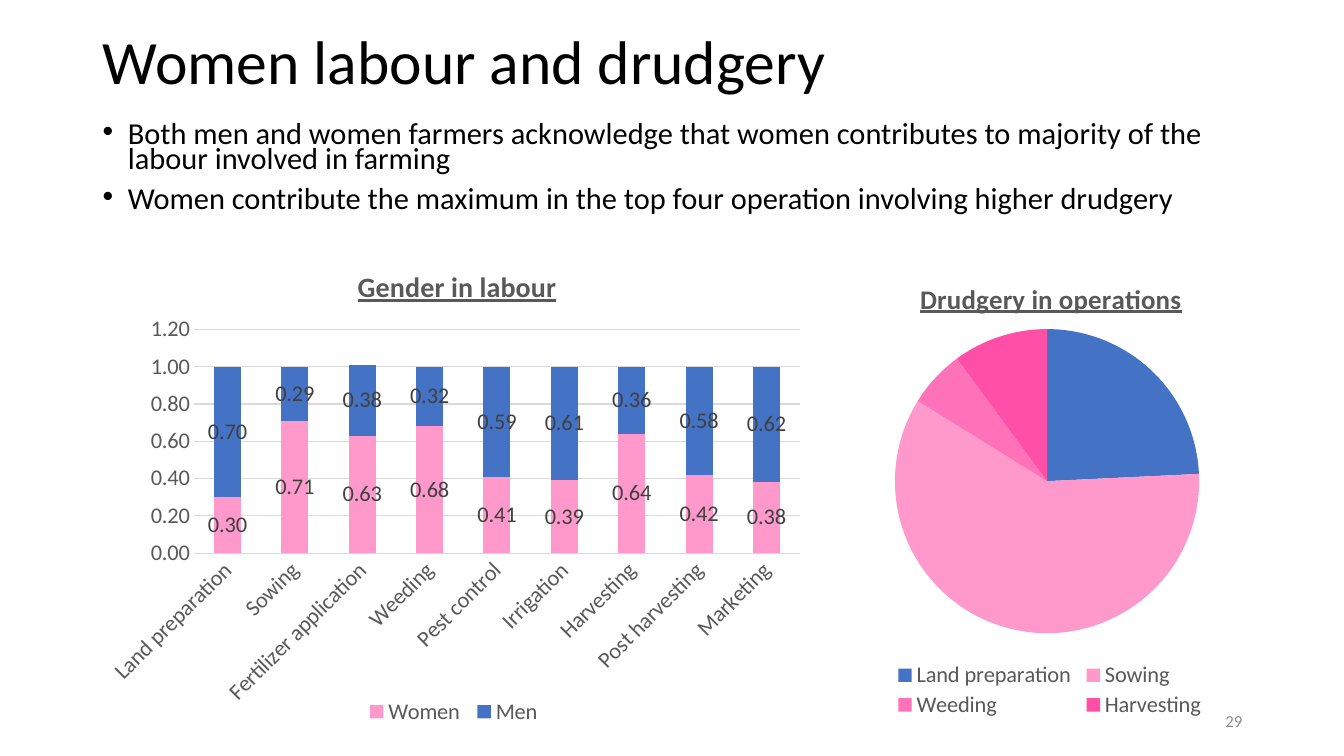
import pptx
import pptx.chart.data
import pptx.dml.color
import pptx.enum.chart
import pptx.enum.text
import pptx.oxml
import pptx.oxml.ns
import pptx.util
from pptx.util import Inches

RGBColor = pptx.dml.color.RGBColor
BLACK = RGBColor(0x00, 0x00, 0x00)
AXIS_GREY = RGBColor(0x59, 0x59, 0x59)
LABEL_GREY = RGBColor(0x40, 0x40, 0x40)
NUMBER_GREY = RGBColor(0x8C, 0x8C, 0x8C)
GRID_GREY = RGBColor(0xD9, 0xD9, 0xD9)
BLUE = RGBColor(0x44, 0x72, 0xC4)
LIGHT_PINK = RGBColor(0xFF, 0x99, 0xCC)
MID_PINK = RGBColor(0xFF, 0x71, 0xB8)
HOT_PINK = RGBColor(0xFF, 0x4F, 0xA7)

BULLETS = [
    "Both men and women farmers acknowledge that women contributes to majority "
    "of the labour involved in farming",
    "Women contribute the maximum in the top four operation involving higher drudgery",
]
OPERATIONS = ["Land preparation", "Sowing", "Fertilizer application", "Weeding",
              "Pest control", "Irrigation", "Harvesting", "Post harvesting", "Marketing"]
LABOUR = [
    ("Women", [0.30, 0.71, 0.63, 0.68, 0.41, 0.39, 0.64, 0.42, 0.38], LIGHT_PINK),
    ("Men", [0.70, 0.29, 0.38, 0.32, 0.59, 0.61, 0.36, 0.58, 0.62], BLUE),
]
DRUDGERY = [24, 59, 0, 6, 0, 0, 10]
SLICE_COLOURS = {0: BLUE, 1: LIGHT_PINK, 3: MID_PINK, 6: HOT_PINK}


def style_font(font, size, colour):
    font.name = "Calibri"
    font.size = pptx.util.Pt(size)
    font.color.rgb = colour


def chart_element(tag, **attributes):
    element = pptx.oxml.parse_xml(f"<c:{tag} {pptx.oxml.ns.nsdecls('c')}/>")
    for name, value in attributes.items():
        element.set(name, str(value))
    return element


def place_part(part, left, top, width=None, height=None, inner=False):
    """Fix a chart part at fractions of the chart's frame."""
    layout = part.find(pptx.oxml.ns.qn("c:layout"))
    if layout is None:
        layout = chart_element("layout")
        overlay = part.find(pptx.oxml.ns.qn("c:overlay"))
        if overlay is None:
            part.insert(0, layout)
        else:
            overlay.addprevious(layout)
    manual = chart_element("manualLayout")
    layout.append(manual)
    if inner:
        manual.append(chart_element("layoutTarget", val="inner"))
    for tag in ("xMode", "yMode"):
        manual.append(chart_element(tag, val="edge"))
    for tag, value in zip("xywh", (left, top, width, height)):
        if value is not None:
            manual.append(chart_element(tag, val=value))


def add_titled_chart(slide, box, kind, data, title, title_size):
    """Add a chart with its underlined title and bottom legend."""
    chart = slide.shapes.add_chart(kind, *map(Inches, box), data).chart
    style_font(chart.font, 16, BLACK)
    chart.has_title = True
    chart.chart_title.include_in_layout = False
    para = chart.chart_title.text_frame.paragraphs[0]
    para.text = title
    font = para.runs[0].font
    style_font(font, title_size, AXIS_GREY)
    font.bold = font.underline = True

    chart.has_legend = True
    chart.legend.position = pptx.enum.chart.XL_LEGEND_POSITION.BOTTOM
    chart.legend.include_in_layout = False
    style_font(chart.legend.font, 16, AXIS_GREY)
    return chart


def add_heading(slide, box):
    title = slide.shapes.title
    title.left, title.top, title.width, title.height = map(Inches, box)
    frame = title.text_frame
    frame.text = "Women labour and drudgery"
    frame.vertical_anchor = pptx.enum.text.MSO_ANCHOR.MIDDLE
    para = frame.paragraphs[0]
    para.alignment = pptx.enum.text.PP_ALIGN.LEFT
    para.line_spacing = 0.9
    style_font(para.runs[0].font, 44, BLACK)


def add_bullets(slide, box):
    frame = slide.shapes.add_textbox(*map(Inches, box)).text_frame
    frame.word_wrap = True
    frame.text = "\n".join(BULLETS)
    for para in frame.paragraphs:
        para.line_spacing = 0.7
        para.space_before = pptx.util.Pt(10)
        style_font(para.runs[0].font, 21.7, BLACK)
        # Hanging bullet
        properties = para._p.get_or_add_pPr()
        properties.set("marL", str(Inches(0.25)))
        properties.set("indent", str(-Inches(0.25)))
        namespace = pptx.oxml.ns.nsdecls("a")
        properties.append(pptx.oxml.parse_xml(f'<a:buFont {namespace} typeface="Arial"/>'))
        properties.append(pptx.oxml.parse_xml(f'<a:buChar {namespace} char="•"/>'))


def add_labour_chart(slide, box):
    data = pptx.chart.data.CategoryChartData(number_format="0.00")
    data.categories = OPERATIONS
    for name, values, _ in LABOUR:
        data.add_series(name, values)
    chart = add_titled_chart(slide, box, pptx.enum.chart.XL_CHART_TYPE.COLUMN_STACKED,
                             data, "Gender in labour", 20)

    # Stacked columns with centred values
    plot = chart.plots[0]
    plot.gap_width, plot.overlap = 150, 100
    plot.vary_by_categories = False
    for series, (_, _, colour) in zip(plot.series, LABOUR):
        series.format.fill.solid()
        series.format.fill.fore_color.rgb = colour
        labels = series.data_labels
        labels.show_value = True
        labels.number_format, labels.number_format_is_linked = "0.00", False
        labels.position = pptx.enum.chart.XL_LABEL_POSITION.CENTER
        style_font(labels.font, 16, LABEL_GREY)

    # Axes
    names, shares = chart.category_axis, chart.value_axis
    for axis in (names, shares):
        axis.major_tick_mark = pptx.enum.chart.XL_TICK_MARK.NONE
        style_font(axis.tick_labels.font, 16, AXIS_GREY)
    names._element.txPr.find(pptx.oxml.ns.qn("a:bodyPr")).set("rot", "-2700000")
    shares.minimum_scale, shares.maximum_scale, shares.major_unit = 0, 1.2, 0.2
    shares.tick_labels.number_format = "0.00"
    shares.tick_labels.number_format_is_linked = False
    shares.format.line.fill.background()
    for line in (names.format.line, shares.major_gridlines.format.line):
        line.color.rgb = GRID_GREY
        line.width = pptx.util.Pt(0.75)

    place_part(chart.chart_title._element, 0.36, 0.05)
    place_part(chart._chartSpace.chart.plotArea, 0.14, 0.18, 0.84, 0.43, inner=True)
    place_part(chart.legend._element, 0.37, 0.88, 0.26, 0.07)


def add_drudgery_chart(slide, box):
    data = pptx.chart.data.CategoryChartData()
    data.categories = OPERATIONS[:len(DRUDGERY)]
    data.add_series("Series 1", DRUDGERY)
    chart = add_titled_chart(slide, box, pptx.enum.chart.XL_CHART_TYPE.PIE,
                             data, "Drudgery in operations", 19.2)

    # Slices, with the empty ones left out of the legend
    plot = chart.plots[0]
    plot.vary_by_categories = True
    legend_position = chart.legend._element.find(pptx.oxml.ns.qn("c:legendPos"))
    for index in reversed(range(len(DRUDGERY))):
        if index in SLICE_COLOURS:
            fill = plot.series[0].points[index].format.fill
            fill.solid()
            fill.fore_color.rgb = SLICE_COLOURS[index]
        else:
            entry = chart_element("legendEntry")
            entry.append(chart_element("idx", val=index))
            entry.append(chart_element("delete", val=1))
            legend_position.addnext(entry)

    place_part(chart.chart_title._element, 0.24, 0.05)
    place_part(chart._chartSpace.chart.plotArea, 0.2, 0.16, 0.6, 0.65, inner=True)
    place_part(chart.legend._element, 0.19, 0.86, 0.63, 0.13)


def add_page_number(slide, box):
    frame = slide.shapes.add_textbox(*map(Inches, box)).text_frame
    frame.word_wrap = True
    frame.vertical_anchor = pptx.enum.text.MSO_ANCHOR.MIDDLE
    frame.text = "29"
    para = frame.paragraphs[0]
    para.alignment = pptx.enum.text.PP_ALIGN.RIGHT
    style_font(para.runs[0].font, 12, NUMBER_GREY)


def main():
    deck = pptx.Presentation()
    deck.slide_width, deck.slide_height = Inches(13.33), Inches(7.5)
    slide = deck.slides.add_slide(deck.slide_layouts.get_by_name("Title Only"))
    add_heading(slide, (0.92, -0.08, 11.5, 1.45))
    add_page_number(slide, (9.42, 6.95, 3, 0.4))
    add_labour_chart(slide, (0.92, 2.34, 7.16, 5.16))
    add_drudgery_chart(slide, (7.87, 2.49, 5.03, 4.71))
    add_bullets(slide, (0.92, 1.18, 11.5, 1.16))
    deck.save("out.pptx")


if __name__ == "__main__":
    main()
